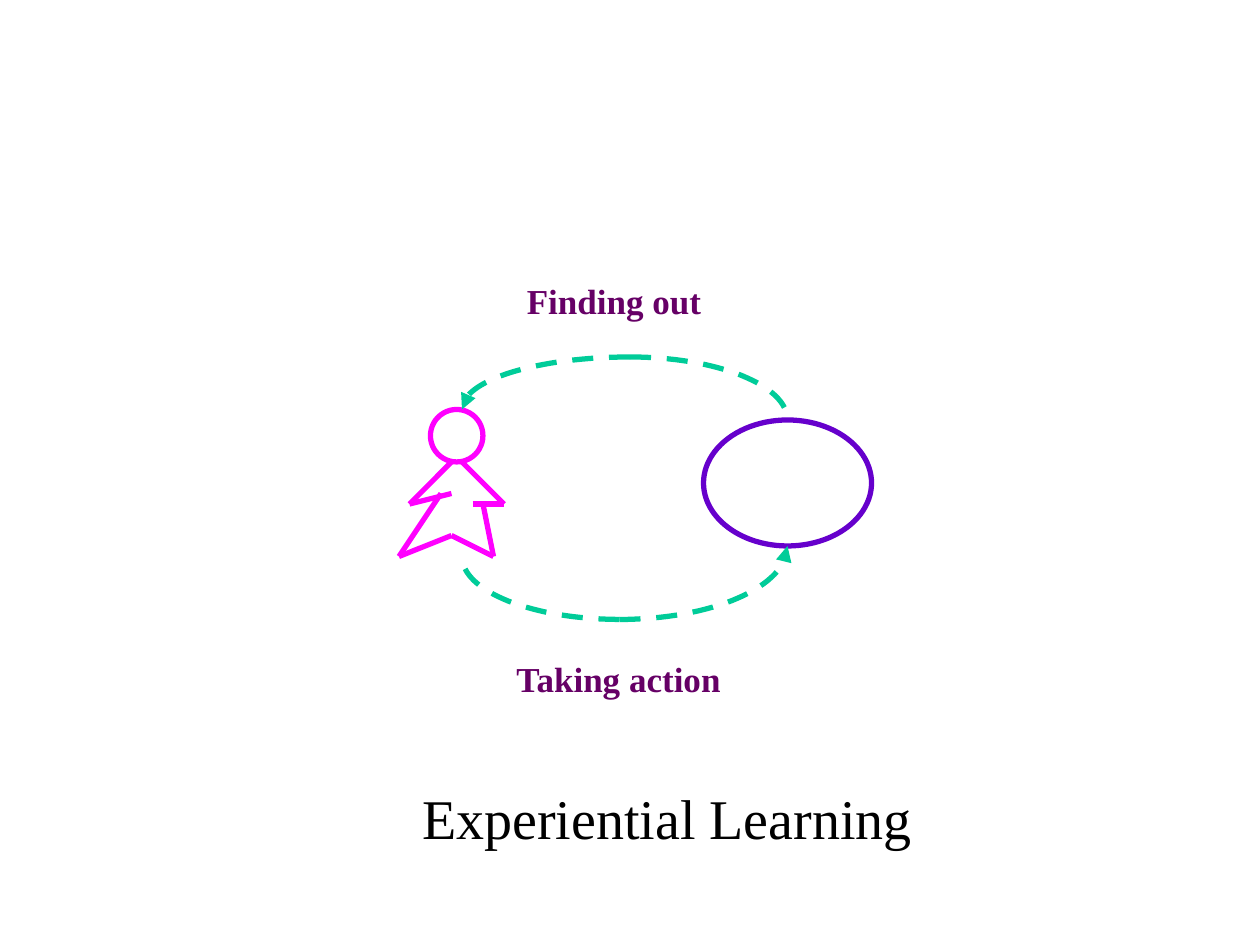
from math import cos, pi, sin

from lxml.etree import SubElement
from pptx import Presentation
from pptx.dml.color import RGBColor
from pptx.enum.dml import MSO_LINE
from pptx.enum.shapes import MSO_CONNECTOR, MSO_SHAPE
from pptx.enum.text import MSO_ANCHOR, MSO_AUTO_SIZE, PP_ALIGN
from pptx.oxml.ns import qn
from pptx.util import Pt

PINK, VIOLET, GREEN, PLUM, BLACK = "FF00FF", "6600CC", "00CC99", "660066", "000000"
ARC_STEPS = 32


def colour(value):
    return RGBColor.from_string(value)


def write(box, text, size, ink, bold=False):
    frame = box.text_frame
    frame.word_wrap = True
    frame.auto_size = MSO_AUTO_SIZE.NONE
    frame.vertical_anchor = MSO_ANCHOR.TOP
    para = frame.paragraphs[0]
    para.alignment = PP_ALIGN.LEFT
    span = para.add_run()
    span.text = text
    span.font.name = "Times New Roman"
    span.font.size = Pt(size)
    span.font.bold = bold
    span.font.color.rgb = colour(ink)


deck = Presentation()
deck.slide_width, deck.slide_height = Pt(720), Pt(540)
page = deck.slides.add_slide(deck.slide_layouts[5])
outlined = []

# Learner's head and the situation being studied
for left, top, width, height, ink in [
    (246, 234, 30, 30, PINK),
    (402, 240, 96, 72, VIOLET),
]:
    oval = page.shapes.add_shape(
        MSO_SHAPE.OVAL, Pt(left), Pt(top), Pt(width), Pt(height))
    oval.fill.background()
    oval.shadow.inherit = False
    outlined.append((oval, ink))

# Learner's body
for x1, y1, x2, y2 in [
    (258, 264, 234, 288),
    (264, 264, 288, 288),
    (234, 288, 258, 282),
    (270, 288, 288, 288),
    (252, 282, 228, 318),
    (228, 318, 258, 306),
    (258, 306, 282, 318),
    (276, 288, 282, 318),
]:
    limb = page.shapes.add_connector(
        MSO_CONNECTOR.STRAIGHT, Pt(x1), Pt(y1), Pt(x2), Pt(y2))
    outlined.append((limb, PINK))

# Quarter ellipses, each running from the middle of the cycle to its side
arcs = []
for centre_x, centre_y, radius_x, radius_y, arrow in [
    (360, 234, -96, 30, True),
    (360, 240, 90, 36, False),
    (354, 318, -90, -36, False),
    (354, 312, 96, -42, True),
]:
    angles = [pi / 2 * step / ARC_STEPS for step in range(ARC_STEPS + 1)]
    points = [(Pt(centre_x + radius_x * sin(angle)),
               Pt(centre_y - radius_y * cos(angle))) for angle in angles]
    builder = page.shapes.build_freeform(*points[0])
    builder.add_line_segments(points[1:], close=False)
    arc = builder.convert_to_shape()
    arc.fill.background()
    arc.shadow.inherit = False
    outlined.append((arc, GREEN))
    arcs.append((arc, arrow))

for shape, ink in outlined:
    shape.line.color.rgb = colour(ink)
    shape.line.width = Pt(3)
    if shape.element.tag == qn("p:cxnSp"):
        SubElement(shape.element.spPr, qn("a:effectLst"))

for arc, arrow in arcs:
    arc.line.dash_style = MSO_LINE.DASH
    if arrow:
        SubElement(arc.line._get_or_add_ln(), qn("a:tailEnd"), type="triangle")

for text, left, top, width in [
    ("Finding out", 294, 156, 366),
    ("Taking action", 288, 372, 264),
]:
    label = page.shapes.add_textbox(Pt(left), Pt(top), Pt(width), Pt(31))
    write(label, text, size=20, ink=PLUM, bold=True)

title = page.shapes.title
title.left, title.top, title.width, title.height = Pt(234), Pt(444), Pt(300), Pt(45)
write(title, "Experiential Learning", size=32, ink=BLACK)

deck.save("out.pptx")
